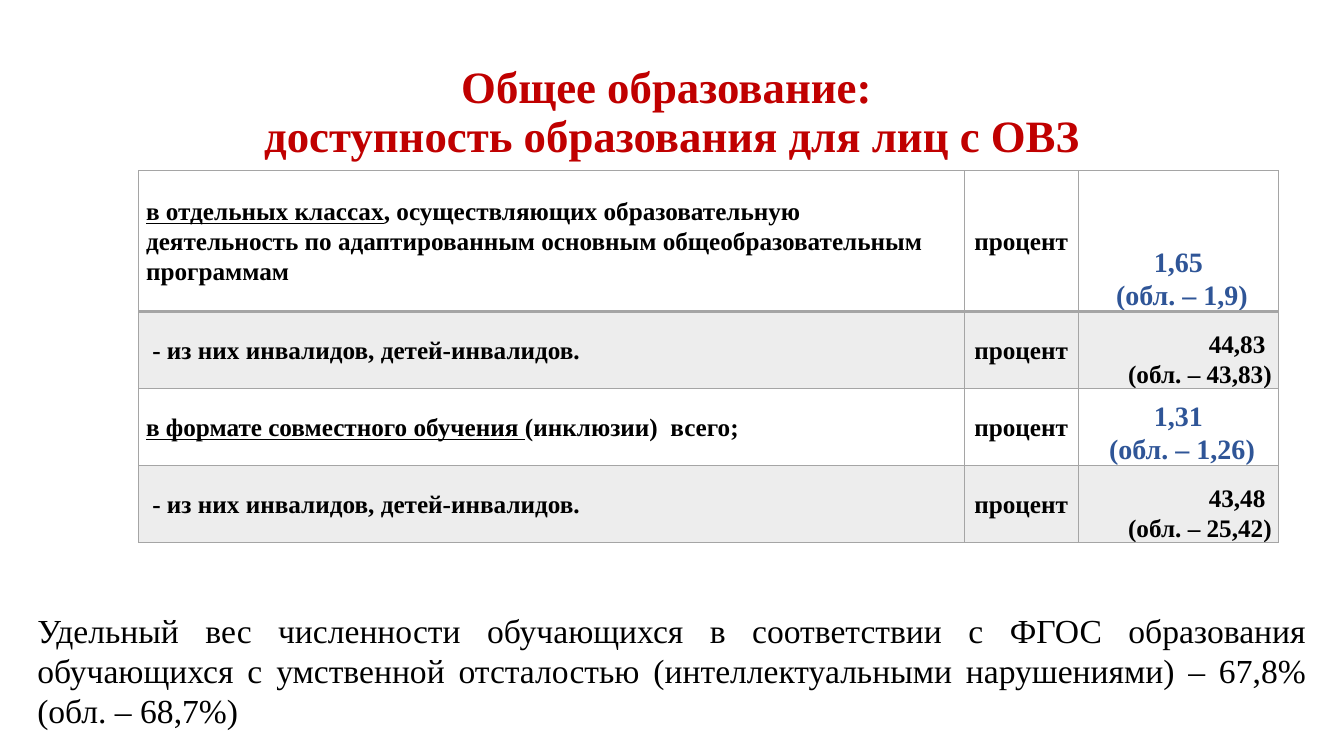
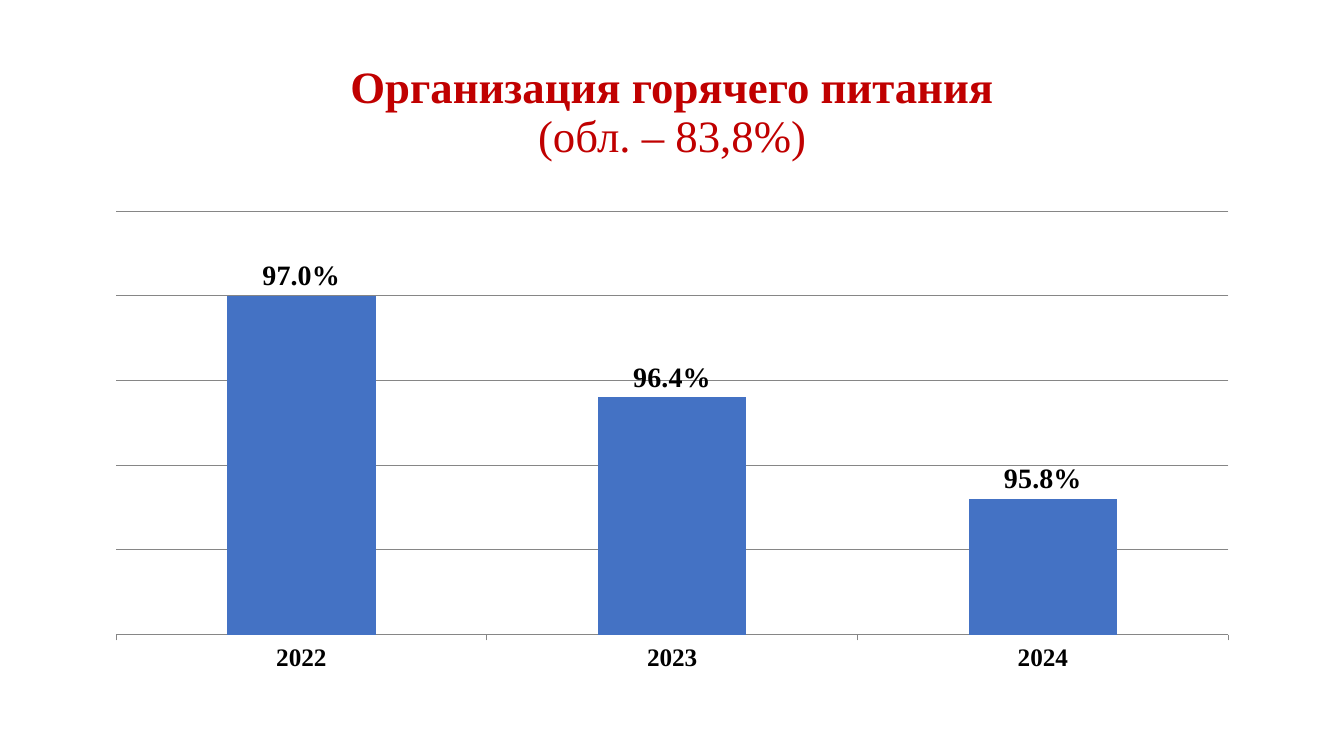
from dataclasses import dataclass

from lxml.etree import SubElement
from pptx import Presentation
from pptx.chart.data import CategoryChartData
from pptx.dml.color import RGBColor as RGB
from pptx.enum.chart import XL_CHART_TYPE as ChartType
from pptx.enum.chart import XL_LABEL_POSITION as LabelPos
from pptx.enum.chart import XL_TICK_LABEL_POSITION as TickLabelPos
from pptx.enum.chart import XL_TICK_MARK as TickMark
from pptx.enum.text import MSO_ANCHOR as Anchor
from pptx.enum.text import PP_ALIGN as Align
from pptx.oxml.ns import qn
from pptx.util import Cm, Pt


@dataclass(frozen=True)
class Theme:
    """Colours, font and type sizes shared by the slides."""

    font: str = "Times New Roman"
    title: RGB = RGB(0xC0, 0x00, 0x00)
    text: RGB = RGB(0x00, 0x00, 0x00)
    accent: RGB = RGB(0x2F, 0x55, 0x97)
    bar: RGB = RGB(0x44, 0x72, 0xC4)
    grid: RGB = RGB(0x86, 0x86, 0x86)
    border: RGB = RGB(0xA5, 0xA5, 0xA5)
    band: RGB = RGB(0xED, 0xED, 0xED)
    title_size: Pt = Pt(32)
    body_size: Pt = Pt(24)
    value_size: Pt = Pt(20)
    label_size: Pt = Pt(18)


THEME = Theme()
CONTENT_LEFT, CONTENT_WIDTH = Cm(2.34), Cm(29.2)


def set_font(font, size, color=THEME.text, bold=False):
    """Apply the shared typeface with a size, colour and weight."""
    font.name = THEME.font
    font.size = size
    font.bold = bold
    font.color.rgb = color


def add_text(s, box, lines, size, color=THEME.text, align=Align.CENTER,
             anchor=Anchor.TOP, spacing=1.0):
    """Add a text box whose lines are (text, bold) pairs."""
    tf = s.shapes.add_textbox(*box).text_frame
    tf.word_wrap = True
    tf.vertical_anchor = anchor
    for i, (text, bold) in enumerate(lines):
        p = tf.paragraphs[0] if i == 0 else tf.add_paragraph()
        p.text = text
        p.alignment = align
        p.line_spacing = spacing
        set_font(p.font, size, color, bold)


def add_title(s, lines):
    """Add the centred red slide title."""
    box = CONTENT_LEFT, Cm(1.02), CONTENT_WIDTH, Cm(3.68)
    add_text(s, box, lines, THEME.title_size, THEME.title,
             anchor=Anchor.MIDDLE, spacing=0.9)


def set_borders(cell, bottom):
    """Draw grey lines on all four sides of a cell."""
    tc_pr = cell._tc.get_or_add_tcPr()
    for side, width in zip("LRTB", (Pt(1), Pt(1), Pt(1), bottom)):
        ln = SubElement(tc_pr, qn(f"a:ln{side}"), w=str(width))
        fill = SubElement(ln, qn("a:solidFill"))
        SubElement(fill, qn("a:srgbClr"), val=str(THEME.border))


def fill_cell(cell, lines, align, anchor, size, color):
    """Write lines of (text, underlined) runs into a cell."""
    cell.margin_left = cell.margin_right = Cm(0.18)
    cell.margin_top = cell.margin_bottom = 0
    cell.vertical_anchor = anchor
    tf = cell.text_frame
    for i, runs in enumerate(lines):
        p = tf.paragraphs[0] if i == 0 else tf.add_paragraph()
        p.alignment = align
        p.line_spacing = 1.07
        set_font(p.font, size, color, bold=True)
        for text, underlined in runs:
            r = p.add_run()
            r.text = text
            r.font.underline = underlined


def add_indicator_table(s, left, top, widths, heights, rows):
    """Add a table of (label runs, value lines, is_total) indicators."""
    table = s.shapes.add_table(len(rows), len(widths), left, top,
                               sum(widths), sum(heights)).table
    table.first_row = table.horz_banding = False
    for column, width in zip(table.columns, widths):
        column.width = width
    for i, (row, height, (label, values, is_total)) in enumerate(
            zip(table.rows, heights, rows)):
        row.height = height
        for cell in row.cells:
            set_borders(cell, Pt(2) if i == 0 else Pt(1))
            if is_total:
                cell.fill.background()
            else:
                cell.fill.solid()
                cell.fill.fore_color.rgb = THEME.band
        name, unit, value = row.cells
        plain = Anchor.MIDDLE, THEME.label_size, THEME.text
        fill_cell(name, [label], Align.LEFT, *plain)
        fill_cell(unit, [[("процент", False)]], Align.CENTER, *plain)
        style = ((Align.CENTER, Anchor.BOTTOM, THEME.value_size, THEME.accent)
                 if is_total else
                 (Align.RIGHT, Anchor.BOTTOM, THEME.label_size, THEME.text))
        fill_cell(value, [[(text, False)] for text in values], *style)


def add_column_chart(s, box, categories, values, low, high, step):
    """Add a one-series percentage column chart with value labels."""
    data = CategoryChartData(number_format="0.0%")
    data.categories = categories
    data.add_series("Series 1", values)
    chart = s.shapes.add_chart(ChartType.COLUMN_CLUSTERED, *box, data).chart
    chart.has_legend = chart.has_title = False
    set_font(chart.font, THEME.label_size, bold=True)

    plot = chart.plots[0]
    plot.gap_width = 150
    plot.vary_by_categories = False
    fill = plot.series[0].format.fill
    fill.solid()
    fill.fore_color.rgb = THEME.bar
    plot.has_data_labels = True
    labels = plot.data_labels
    labels.show_value = True
    labels.number_format = "0.0%"
    labels.number_format_is_linked = False
    labels.position = LabelPos.OUTSIDE_END
    set_font(labels.font, THEME.value_size, bold=True)

    axis = chart.value_axis
    axis.visible = False
    axis.minimum_scale, axis.maximum_scale = low, high
    axis.major_unit = step
    axis.has_major_gridlines = True
    chart.category_axis.major_tick_mark = TickMark.OUTSIDE
    chart.category_axis.tick_label_position = TickLabelPos.LOW
    for lined in (axis.major_gridlines, chart.category_axis):
        lined.format.line.color.rgb = THEME.grid
        lined.format.line.width = Pt(0.75)


def build_access_slide(s):
    """Build the slide on access to education."""
    add_title(s, [("Общее образование: ", True),
                  ("доступность образования для лиц с ОВЗ", True)])
    disabled = [(" - из них инвалидов, детей-инвалидов.", False)]
    rows = [
        ([("в отдельных классах", True),
          (", осуществляющих образовательную деятельность по адаптированным "
           "основным общеобразовательным программам", False)],
         ["1,65", " (обл. – 1,9)"], True),
        (disabled, ["44,83 ", "(обл. – 43,83)"], False),
        ([("в формате совместного обучения ", True),
          ("(инклюзии)  всего;", False)],
         ["1,31", " (обл. – 1,26)"], True),
        (disabled, ["43,48 ", "(обл. – 25,42)"], False),
    ]
    add_indicator_table(s, Cm(3.5), Cm(4.3),
                        [Cm(20.8), Cm(2.87), Cm(5.06)],
                        [Cm(3.55)] + [Cm(1.94)] * 3, rows)
    add_text(s, (Cm(0.69), Cm(15.24), Cm(32.48), Cm(3.33)),
             [("Удельный вес численности обучающихся в соответствии с ФГОС "
               "образования обучающихся с умственной отсталостью "
               "(интеллектуальными нарушениями) – 67,8% (обл. – 68,7%) ",
               False)],
             THEME.body_size, align=Align.JUSTIFY)


def build_meals_slide(s):
    """Build the slide on hot meals."""
    add_title(s, [("Организация горячего питания", True),
                  ("(обл. – 83,8%)", False)])
    add_column_chart(s, (CONTENT_LEFT, Cm(5.08), CONTENT_WIDTH, Cm(12.09)),
                     ["2022", "2023", "2024"], [0.97, 0.964, 0.958],
                     low=0.95, high=0.975, step=0.005)


def main():
    """Build both slides and save the presentation."""
    prs = Presentation()
    prs.slide_width, prs.slide_height = Cm(33.87), Cm(19.05)
    blank = prs.slide_layouts[6]
    for build in (build_access_slide, build_meals_slide):
        build(prs.slides.add_slide(blank))
    prs.save("out.pptx")


if __name__ == "__main__":
    main()
